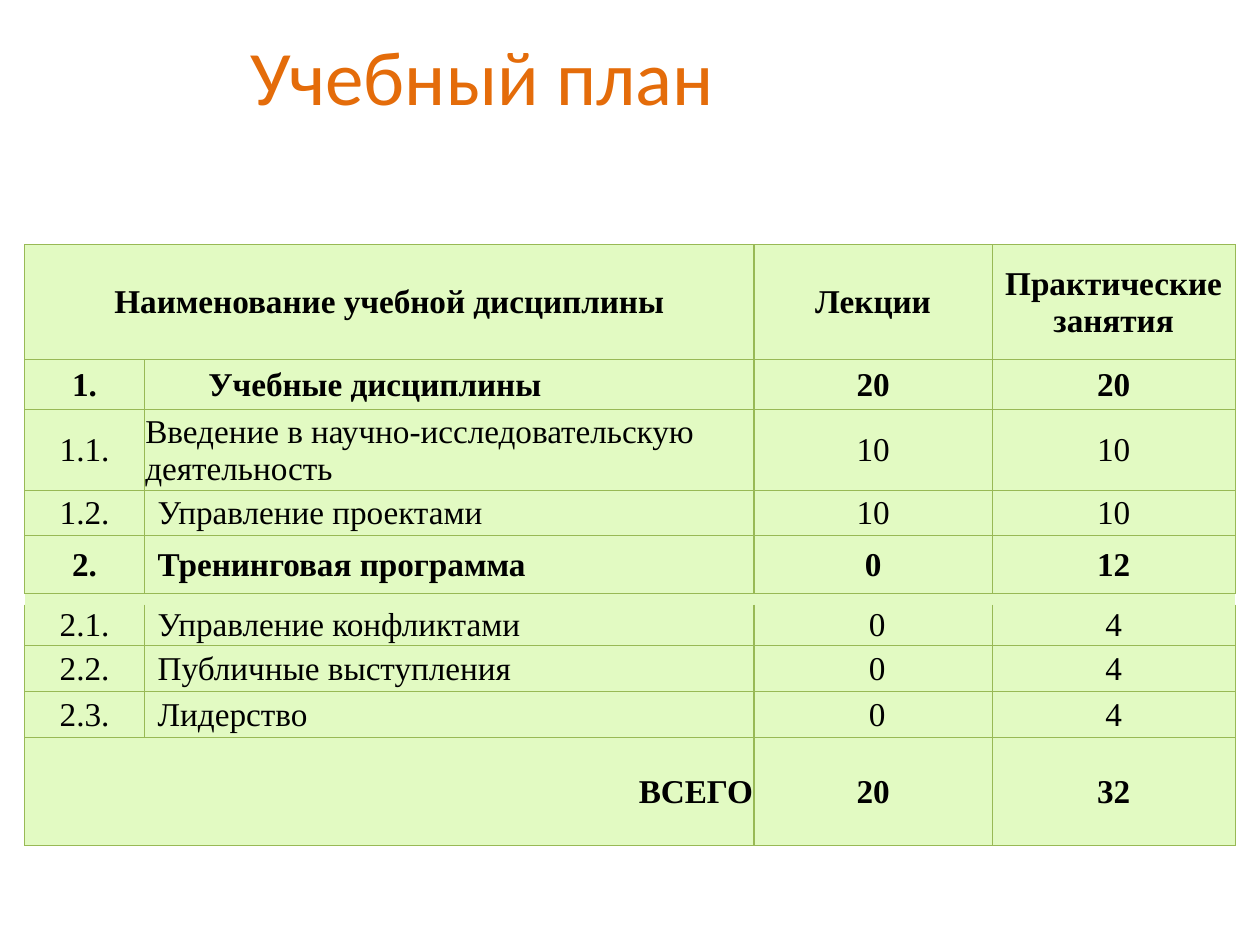
from lxml import etree
from pptx import Presentation
from pptx.dml.color import RGBColor
from pptx.enum.text import MSO_ANCHOR, PP_ALIGN
from pptx.oxml.ns import qn
from pptx.util import Cm, Pt

ORANGE = RGBColor(0xE4, 0x6C, 0x0A)
BLACK = RGBColor(0x00, 0x00, 0x00)
PALE_GREEN = RGBColor(0xE2, 0xFA, 0xC2)
BORDER_GREEN = RGBColor(0x98, 0xB9, 0x55)

COLUMN_WIDTHS = [2.41, 12.29, 4.8, 4.9]
ROW_HEIGHTS = [2.32, 1.01, 1.51, 0.91, 1.17, 0.22, 0.77, 0.93, 0.92, 2.18]
PLAN = [
    ("Наименование учебной дисциплины", "", "Лекции", "Практические занятия"),
    ("1.", "Учебные дисциплины", "20", "20"),
    ("1.1.", "Введение в научно-исследовательскую деятельность", "10", "10"),
    ("1.2.", "Управление проектами", "10", "10"),
    ("2.", "Тренинговая программа", "0", "12"),
    ("", "", "", ""),
    ("2.1.", "Управление конфликтами", " 0", "4"),
    ("2.2.", "Публичные выступления", " 0", "4"),
    ("2.3.", "Лидерство", " 0", "4"),
    ("ВСЕГО", "", "20", "32"),
]
BOLD_ROWS = {0, 1, 4, 9}
SPACER_ROW = 5
TOTAL_ROW = 9
NAME_INDENTS = {1: 1.27, 3: 0.25, 4: 0.25, 6: 0.25, 7: 0.25, 8: 0.25}
MERGED_COLUMNS = {0: 1, SPACER_ROW: 3, TOTAL_ROW: 1}


def add_title(slide, text):
    title = slide.shapes.add_textbox(Cm(1.7), Cm(-0.08), Cm(16.05), Cm(3.18))
    frame = title.text_frame
    frame.word_wrap = True
    frame.vertical_anchor = MSO_ANCHOR.MIDDLE
    heading = frame.paragraphs[0]
    heading.text = text
    heading.alignment = PP_ALIGN.CENTER
    heading.font.name = "Calibri"
    heading.font.size = Pt(44)
    heading.font.color.rgb = ORANGE


def set_borders(cell, visible_sides):
    properties = cell._tc.get_or_add_tcPr()
    for position, side in enumerate("LRTB"):
        line = etree.Element(qn(f"a:ln{side}"), w=str(Pt(0.75)))
        if side in visible_sides:
            fill = etree.SubElement(line, qn("a:solidFill"))
            etree.SubElement(fill, qn("a:srgbClr"), val=str(BORDER_GREEN))
        else:
            etree.SubElement(line, qn("a:noFill"))
        properties.insert(position, line)


def format_cell(cell, text, bold, alignment, indent):
    cell.margin_left = cell.margin_right = cell.margin_top = Cm(0.02)
    cell.margin_bottom = 0
    cell.vertical_anchor = MSO_ANCHOR.MIDDLE
    cell.fill.solid()
    cell.fill.fore_color.rgb = PALE_GREEN
    entry = cell.text_frame.paragraphs[0]
    if not text:
        etree.SubElement(entry._p, qn("a:endParaRPr"), sz="100")
        return
    entry.text = text
    entry.alignment = alignment
    if indent:
        entry._p.get_or_add_pPr().set("indent", str(Cm(indent)))
    entry.font.name = "Times New Roman"
    entry.font.size = Pt(19)
    entry.font.bold = bold
    entry.font.color.rgb = BLACK


def cell_alignment(row, column):
    if row == TOTAL_ROW and column == 0:
        return PP_ALIGN.RIGHT
    return PP_ALIGN.LEFT if column == 1 else PP_ALIGN.CENTER


def add_plan_table(slide):
    plan = slide.shapes.add_table(
        len(PLAN), len(COLUMN_WIDTHS), Cm(0.5), Cm(4.93),
        Cm(sum(COLUMN_WIDTHS)), Cm(sum(ROW_HEIGHTS))).table
    plan.first_row = False
    plan.horz_banding = False
    for column, width in zip(plan.columns, COLUMN_WIDTHS):
        column.width = Cm(width)
    for row, height in zip(plan.rows, ROW_HEIGHTS):
        row.height = Cm(height)
    border_sides = {SPACER_ROW: "T", SPACER_ROW + 1: "LRB"}
    for row, entries in enumerate(PLAN):
        for column, text in enumerate(entries):
            cell = plan.cell(row, column)
            indent = NAME_INDENTS.get(row, 0) if column == 1 else 0
            format_cell(cell, text, row in BOLD_ROWS,
                        cell_alignment(row, column), indent)
            set_borders(cell, border_sides.get(row, "LRTB"))
    for row, last_column in MERGED_COLUMNS.items():
        plan.cell(row, 0).merge(plan.cell(row, last_column))


def main():
    presentation = Presentation()
    presentation.slide_width = Cm(25.4)
    presentation.slide_height = Cm(19.05)
    slide = presentation.slides.add_slide(presentation.slide_layouts[6])
    add_title(slide, "Учебный план")
    add_plan_table(slide)
    presentation.save("out.pptx")


if __name__ == "__main__":
    main()
